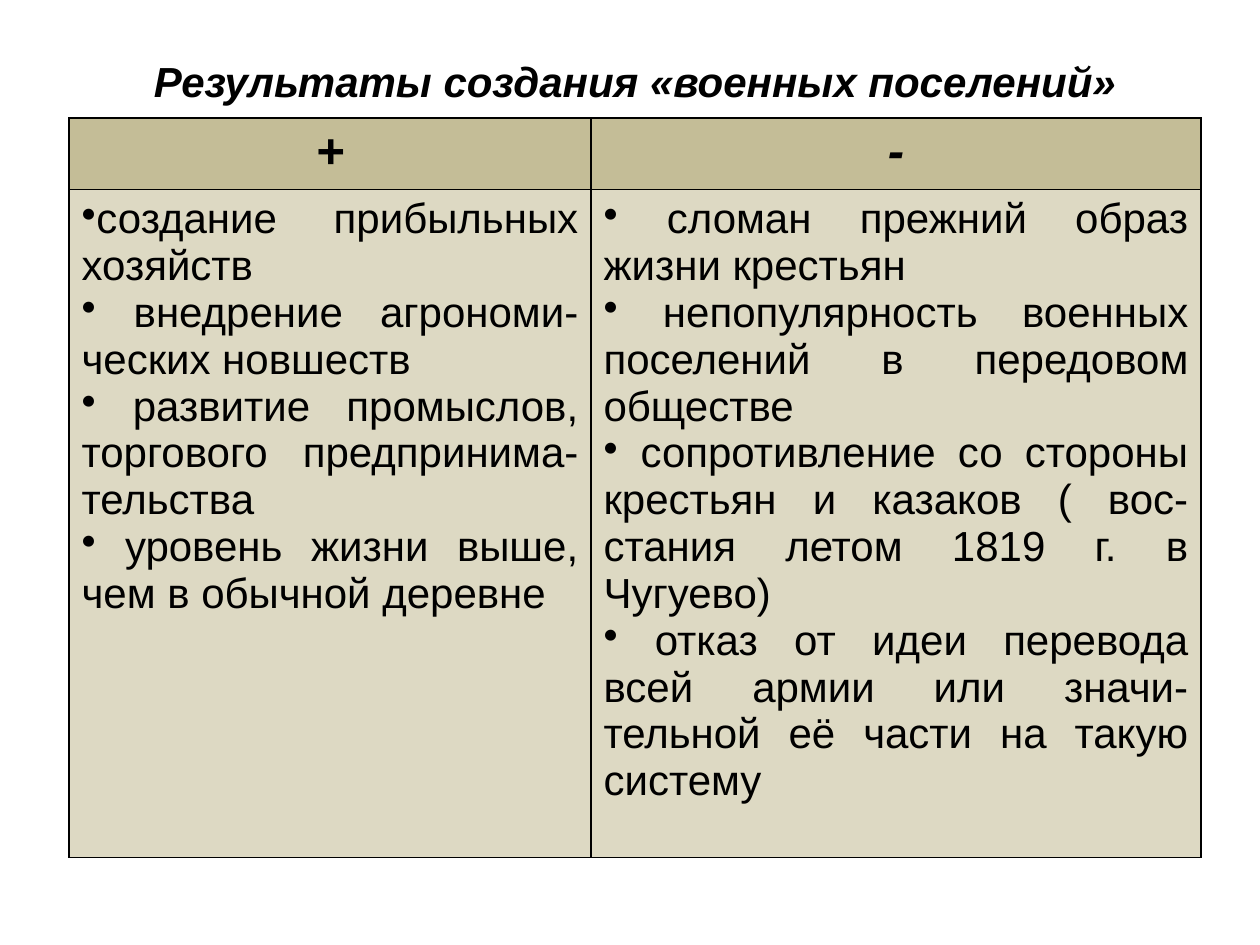
"""Builds a slide with a two-column table on the results of the military settlements."""
from lxml.etree import SubElement
from pptx import Presentation
from pptx.dml.color import RGBColor
from pptx.enum.text import MSO_ANCHOR, PP_ALIGN as AL
from pptx.oxml.ns import qn
from pptx.util import Pt

PX = 914400 // 126


def style(p, size, align, bold):
    p.alignment = align
    for r in p.runs:
        r.font.name = "Arial"
        r.font.size = Pt(size)
        r.font.bold = r.font.italic = bold
        r.font.color.rgb = RGBColor.from_string("000000")


def decorate(cell, color):
    cell.fill.solid()
    cell.fill.fore_color.rgb = RGBColor.from_string(color)
    pr = cell._tc.get_or_add_tcPr()
    for i, side in enumerate(("lnL", "lnR", "lnT", "lnB")):
        ln = pr.makeelement(qn(f"a:{side}"), {"w": str(Pt(1))})
        pr.insert(i, ln)
        SubElement(SubElement(ln, qn("a:solidFill")), qn("a:srgbClr"), val="000000")


prs = Presentation()
prs.slide_width, prs.slide_height = 1260 * PX, 945 * PX
s = prs.slides.add_slide(prs.slide_layouts[6])

tf = s.shapes.add_textbox(49 * PX, 49 * PX, 1172 * PX, 63 * PX).text_frame
tf.word_wrap = True
tf.text = "Результаты создания «военных поселений»"
style(tf.paragraphs[0], 24, AL.CENTER, True)

columns = [
    ("+", 522, [
        "создание прибыльных хозяйств",
        " внедрение агрономи-ческих новшеств",
        " развитие промыслов, торгового предпринима-тельства",
        " уровень жизни выше, чем в обычной деревне",
    ]),
    ("-", 610, [
        " сломан прежний образ жизни крестьян",
        " непопулярность военных поселений в передовом обществе",
        " сопротивление со стороны крестьян и казаков ( вос-стания летом 1819 г. в Чугуево)",
        " отказ от идеи перевода всей армии или значи-тельной её части на такую систему",
    ]),
]
table = s.shapes.add_table(2, 2, 69 * PX, 118 * PX, 1132 * PX, 739 * PX).table
table.rows[0].height, table.rows[1].height = 71 * PX, 668 * PX

for i, (sign, width, points) in enumerate(columns):
    table.columns[i].width = width * PX
    head, body = table.cell(0, i), table.cell(1, i)
    decorate(head, "C4BD97")
    decorate(body, "DDD9C3")
    head.vertical_anchor = body.vertical_anchor = MSO_ANCHOR.TOP
    head.text = sign
    style(head.text_frame.paragraphs[0], 28, AL.CENTER, True)
    body.text = "\n".join(points)
    for p in body.text_frame.paragraphs:
        SubElement(p._p.get_or_add_pPr(), qn("a:buChar"), char="•")
        style(p, 24, AL.JUSTIFY, False)

prs.save("out.pptx")
